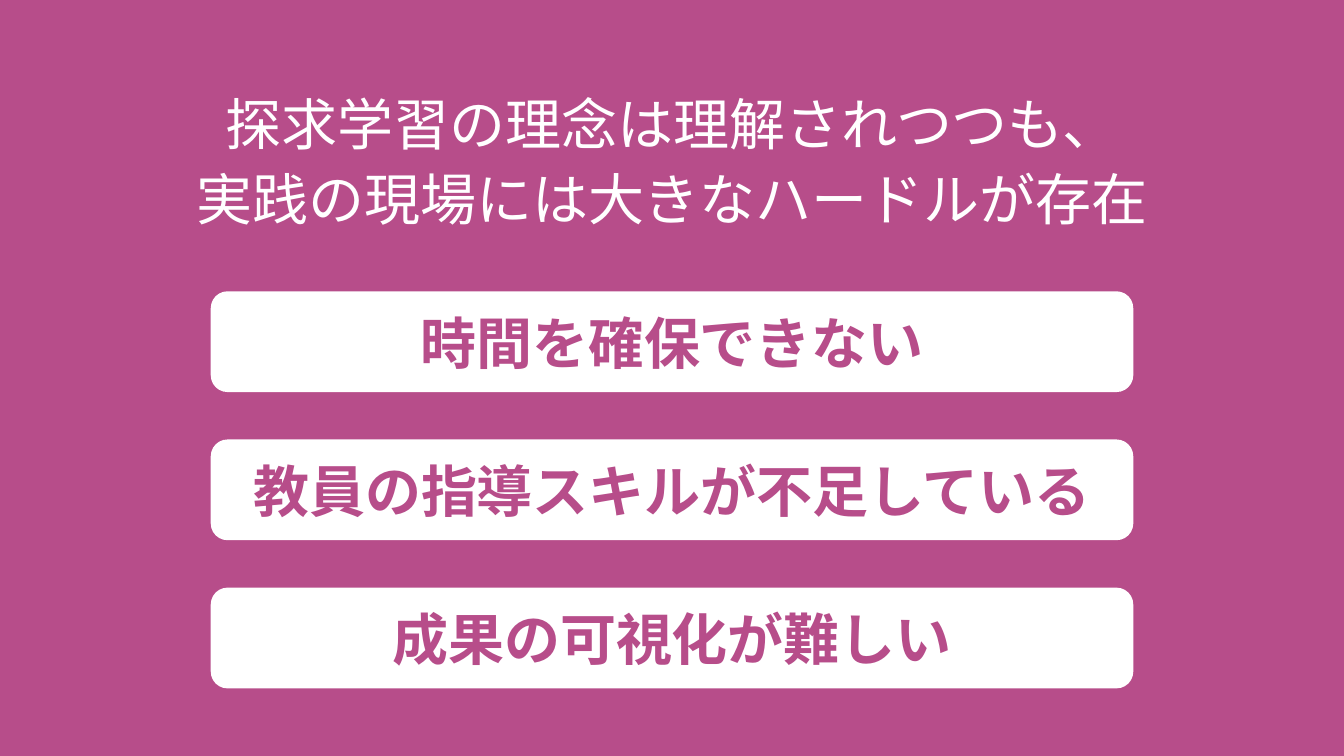
"""Build a slide on the hurdles that inquiry learning meets in practice."""
from lxml import etree
from pptx import Presentation
from pptx.dml.color import RGBColor
from pptx.enum.shapes import MSO_SHAPE
from pptx.enum.text import MSO_ANCHOR, PP_ALIGN
from pptx.oxml.ns import qn
from pptx.util import Inches, Pt

MIDDLE = MSO_ANCHOR.MIDDLE
CENTER = PP_ALIGN.CENTER
ROUNDED = MSO_SHAPE.ROUNDED_RECTANGLE
PINK = RGBColor(0xB7, 0x4D, 0x8A)
WHITE = RGBColor(0xFF, 0xFF, 0xFF)
FONT = "Noto Sans CJK JP"
TITLE = "探求学習の理念は理解されつつも、\n実践の現場には大きなハードルが存在"
HURDLES = [
    "時間を確保できない",
    "教員の指導スキルが不足している",
    "成果の可視化が難しい",
]


def write(shape, text, color, bold):
    frame = shape.text_frame
    frame.text = text
    frame.word_wrap = True
    frame.vertical_anchor = MIDDLE
    frame.margin_top = frame.margin_bottom = 0
    for para in frame.paragraphs:
        para.alignment = CENTER
        font = para.font
        font.name = FONT
        font.size = Pt(40)
        font.bold = bold
        font.color.rgb = color
        props = para._p.pPr.find(qn("a:defRPr"))
        etree.SubElement(props, qn("a:ea"), typeface=FONT)


deck = Presentation()
deck.slide_width = Inches(13.33)
deck.slide_height = Inches(7.5)
slide = deck.slides.add_slide(deck.slide_layouts[5])
slide.background.fill.solid()
slide.background.fill.fore_color.rgb = PINK

title = slide.shapes.title
title.left, title.top = Inches(0), Inches(0.8)
title.width, title.height = Inches(13.33), Inches(1.5)
write(title, TITLE, WHITE, False)
for para in title.text_frame.paragraphs:
    para.line_spacing = Pt(54)

for row, hurdle in enumerate(HURDLES):
    top = Inches(2.89 + 1.47 * row)
    bar = slide.shapes.add_shape(ROUNDED, Inches(2.09), top, Inches(9.15), Inches(1))
    bar.shadow.inherit = False
    bar.fill.solid()
    bar.fill.fore_color.rgb = WHITE
    bar.line.fill.background()
    write(bar, hurdle, PINK, True)

deck.save("out.pptx")
